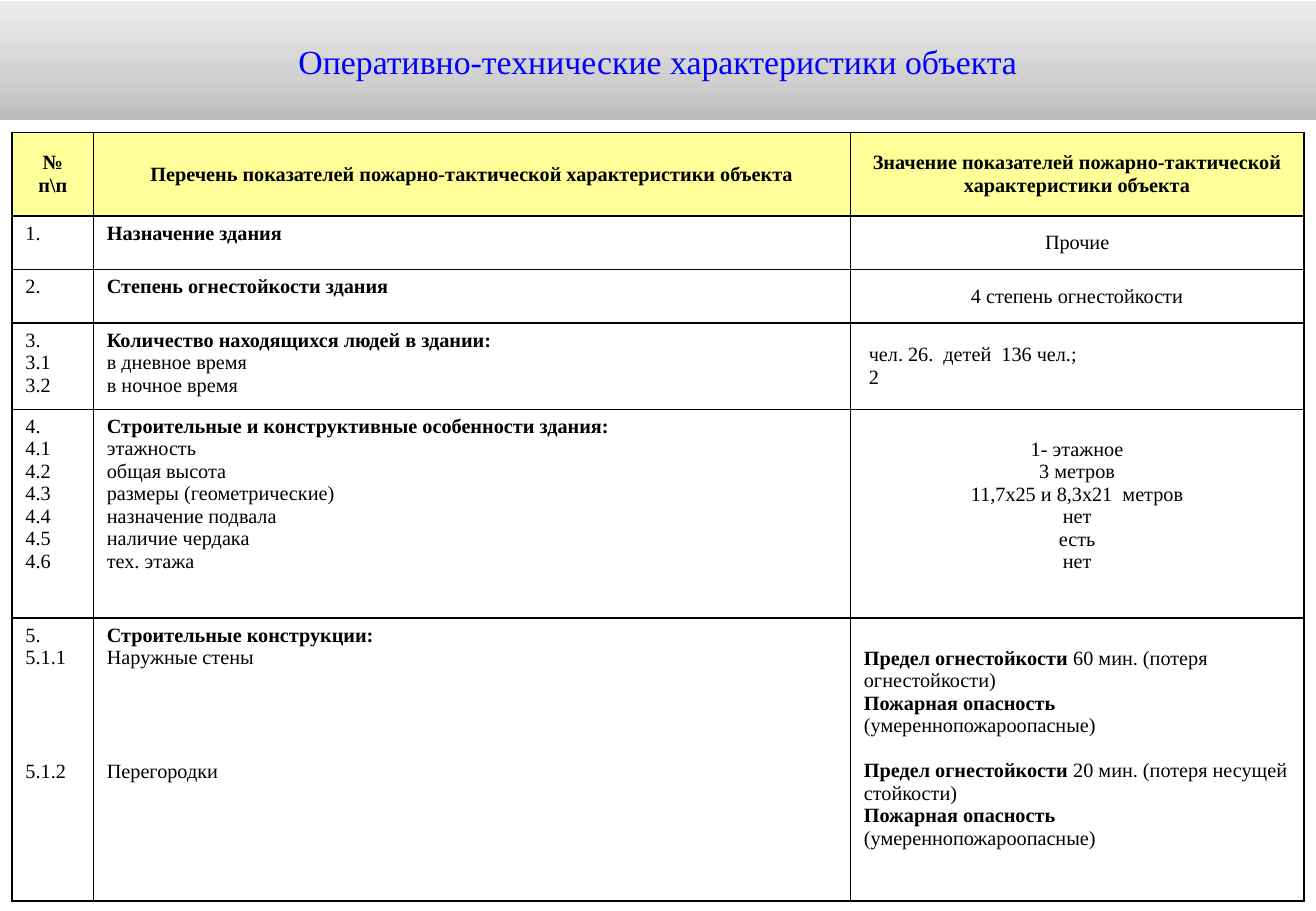
from copy import deepcopy
from lxml import etree
from pptx import Presentation
from pptx import util as u
from pptx.dml import color
from pptx.enum import shapes, text
from pptx.oxml import ns

BLACK = color.RGBColor(0x00, 0x00, 0x00)
BLUE = color.RGBColor(0x00, 0x00, 0xFF)
WHITE = color.RGBColor(0xFF, 0xFF, 0xFF)
CREAM = color.RGBColor(0xFF, 0xFF, 0x99)
DARK = color.RGBColor(0xBC, 0xBC, 0xBC)
GREY = color.RGBColor(0xD0, 0xD0, 0xD0)
LIGHT = color.RGBColor(0xED, 0xED, 0xED)
LEFT, MID = text.PP_ALIGN.LEFT, text.PP_ALIGN.CENTER
TOP, CENTER = text.MSO_ANCHOR.TOP, text.MSO_ANCHOR.MIDDLE
LINE = 13.5

COLS = [0.67, 6.23, 3.73]
ROWS = [0.69, 0.44, 0.44, 0.71, 1.72, 2.33]
CELLS = [
    [["*№*", "*п\\п*"],
     ["*Перечень показателей пожарно-тактической характеристики объекта*"],
     ["*Значение показателей пожарно-тактической характеристики объекта*"]],
    [["1."], ["*Назначение здания*"], ["Прочие"]],
    [["2."], ["*Степень огнестойкости здания*"], ["4 степень огнестойкости"]],
    [["3.", "3.1", "3.2"],
     ["*Количество находящихся людей в здании:*", "в дневное время", "в ночное время"],
     ["чел. 26.  детей  136 чел.;", "2"]],
    [["4.", "4.1", "4.2", "4.3", "4.4", "4.5", "4.6"],
     ["*Строительные и конструктивные особенности здания:*", "этажность",
      "общая высота", "размеры (геометрические)", "назначение подвала",
      "наличие чердака", "тех. этажа"],
     ["1- этажное", "3 метров", "11,7х25 и 8,3х21  метров", "нет", "есть", "нет"]],
    [["5.", "5.1.1", ("5.1.2", 4)],
     ["*Строительные конструкции:*", "Наружные стены", ("Перегородки", 4)],
     ["*Предел огнестойкости *60 мин. (потеря огнестойкости)",
      "*Пожарная опасность *(умереннопожароопасные)",
      ("*Предел огнестойкости *20 мин. (потеря несущей стойкости)", 1),
      "*Пожарная опасность*", "(умереннопожароопасные)"]],
]


class Deck:
    """Holds the style and the current slide; asterisks in text mark bold."""

    def __init__(self, wide, high):
        self.font = "Times New Roman"
        self.prs = Presentation()
        self.prs.slide_width, self.prs.slide_height = u.Inches(wide), u.Inches(high)
        self.slide = self.prs.slides.add_slide(self.prs.slide_layouts[6])

    def put(self, frame, lines, size, tint, align):
        for i, line in enumerate(lines):
            words, gap = line if isinstance(line, tuple) else (line, 0)
            para = frame.add_paragraph() if i else frame.paragraphs[0]
            para.alignment = align
            if gap:
                para.space_before = u.Pt(gap * LINE)
            for k, part in enumerate(words.split("*")):
                if part:
                    run = para.add_run()
                    run.text = part
                    run.font.name, run.font.size = self.font, u.Pt(size)
                    run.font.bold = k % 2 == 1
                    run.font.color.rgb = tint

    def banner(self, box, words, stops):
        bar = self.slide.shapes.add_shape(
            shapes.MSO_SHAPE.RECTANGLE, *[u.Inches(n) for n in box])
        bar.shadow.inherit = False
        bar.line.fill.background()
        bar.fill.gradient()
        bar.fill.gradient_angle = 90
        marks = bar.element.spPr.find(".//" + ns.qn("a:gsLst"))
        marks.append(deepcopy(marks[0]))
        for stop, (spot, tint) in zip(bar.fill.gradient_stops, stops):
            stop.position, stop.color.rgb = spot, tint
        bar.text_frame.word_wrap = True
        bar.text_frame.vertical_anchor = CENTER
        self.put(bar.text_frame, [words], 20, BLUE, MID)

    def border(self, cell):
        props = cell._tc.get_or_add_tcPr()
        for side in ("lnL", "lnR", "lnT", "lnB"):
            edge = etree.SubElement(props, ns.qn("a:" + side), w=str(u.Pt(1)))
            fill = etree.SubElement(edge, ns.qn("a:solidFill"))
            etree.SubElement(fill, ns.qn("a:srgbClr"), val=str(BLACK))

    def table(self, left, top, cols, rows, cells):
        grid = self.slide.shapes.add_table(
            len(rows), len(cols), u.Inches(left), u.Inches(top),
            u.Inches(sum(cols)), u.Inches(sum(rows))).table
        grid.first_row = grid.horz_banding = False
        for col, wide in zip(grid.columns, cols):
            col.width = u.Inches(wide)
        for r, high in enumerate(rows):
            grid.rows[r].height = u.Inches(high)
            for c, lines in enumerate(cells[r]):
                cell = grid.cell(r, c)
                value = c == 2
                low = value and r > 3
                self.border(cell)
                cell.fill.solid()
                cell.fill.fore_color.rgb = WHITE if r else CREAM
                cell.margin_left = u.Inches(0.15 if value and r == 3 else 0.11)
                cell.margin_right = u.Inches(0.11)
                cell.margin_top = u.Inches(0.24 if low else 0.05)
                cell.margin_bottom = u.Inches(0.05)
                cell.vertical_anchor = CENTER if r == 0 or value and not low else TOP
                align = MID if r == 0 or value and r in (1, 2, 4) else LEFT
                self.put(cell.text_frame, lines, 12, BLACK, align)


def main():
    deck = Deck(10.83, 7.5)
    deck.table(0.1, 1.09, COLS, ROWS, CELLS)
    deck.banner((0, 0.01, 10.83, 0.98), "Оперативно-технические характеристики объекта",
                [(0, DARK), (0.35, GREY), (1, LIGHT)])
    deck.prs.save("out.pptx")


if __name__ == "__main__":
    main()
